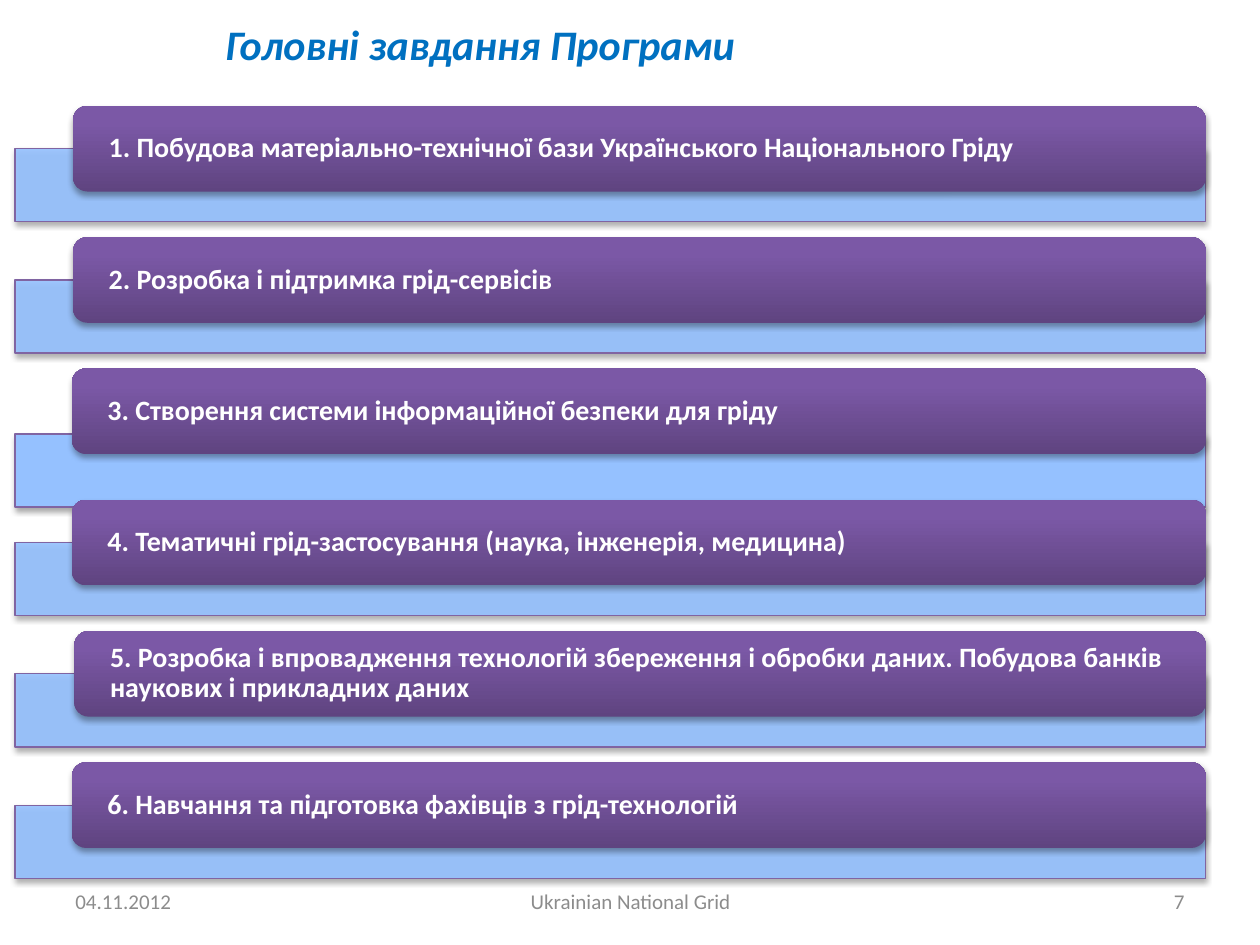
import copy
import pptx
import pptx.util
import pptx.dml.color
import pptx.enum.shapes
import pptx.enum.text
import pptx.oxml
import pptx.oxml.ns

Inches, Pt = pptx.util.Inches, pptx.util.Pt
RGB = pptx.dml.color.RGBColor
SHAPE = pptx.enum.shapes.MSO_SHAPE
ALIGN = pptx.enum.text.PP_ALIGN
MIDDLE = pptx.enum.text.MSO_ANCHOR.MIDDLE
qn = pptx.oxml.ns.qn

BLUE = RGB(0x00, 0x70, 0xC0)
GREY = RGB(0x8C, 0x8C, 0x8C)
WHITE = RGB(0xFF, 0xFF, 0xFF)
SKY = RGB(0x95, 0xC1, 0xFF)
EDGE = RGB(0x80, 0x64, 0xA2)
STOPS = [(0, RGB(0x5F, 0x44, 0x80)), (0.8, RGB(0x7B, 0x58, 0xA6)),
         (1, RGB(0x7C, 0x57, 0xA8))]

TITLE = "Головні завдання Програми"
# Task, left edge of its bar, drop of its strip below the bar top, strip opacity
TASKS = [
    ("1. Побудова матеріально-технічної бази Українського Національного Гріду", 0.58, 0.34, 90),
    ("2. Розробка і підтримка грід-сервісів", 0.58, 0.34, 90),
    ("3. Створення системи інформаційної безпеки для гріду", 0.57, 0.52, 100),
    ("4. Тематичні грід-застосування (наука, інженерія, медицина)", 0.57, 0.34, 90),
    ("5. Розробка і впровадження технологій збереження і обробки даних. "
     "Побудова банків наукових і прикладних даних", 0.59, 0.34, 90),
    ("6. Навчання та підготовка фахівців з грід-технологій", 0.57, 0.34, 90),
]
FOOTER = [
    ("04.11.2012", 0.5, 2.33, ALIGN.LEFT),
    ("Ukrainian National Grid", 3.42, 3.17, ALIGN.CENTER),
    ("7", 7.17, 2.33, ALIGN.RIGHT),
]
TOP, STEP, RIGHT = 0.84, 1.042, 9.57
SHADOW = (
    '<a:outerShdw xmlns:a="http://schemas.openxmlformats.org/drawingml/2006/main" '
    'blurRad="39370" dist="22860" dir="5400000" rotWithShape="0">'
    '<a:srgbClr val="000000"><a:alpha val="35000"/></a:srgbClr></a:outerShdw>')

deck = pptx.Presentation()
deck.slide_width, deck.slide_height = Inches(10), Inches(7.5)
slide = deck.slides.add_slide(deck.slide_layouts[6])


def write(frame, text, size, color, bold=False, align=ALIGN.LEFT):
    frame.text = text
    para = frame.paragraphs[0]
    para.alignment = align
    font = para.runs[0].font
    font.name, font.size, font.bold = "Calibri", Pt(size), bold
    font.color.rgb = color
    return para


def add_block(kind, *box):
    block = slide.shapes.add_shape(kind, *map(Inches, box))
    block.shadow.inherit = False
    effects = block._element.spPr.find(qn("a:effectLst"))
    effects.append(pptx.oxml.parse_xml(SHADOW))
    return block


def add_strip(top, alpha):
    strip = add_block(SHAPE.RECTANGLE, 0.12, top, RIGHT - 0.12, 0.58)
    strip.fill.solid()
    strip.fill.fore_color.rgb = SKY
    strip.line.color.rgb = EDGE
    strip.line.width = Pt(0.75)
    if alpha < 100:
        color = strip._element.spPr.find(qn("a:solidFill"))[0]
        color.makeelement(qn("a:alpha"))
        pptx.oxml.ns  # namespace map used below
        node = color.makeelement(qn("a:alpha"), {"val": str(alpha * 1000)})
        color.append(node)


def add_bar(text, left, top):
    bar = add_block(SHAPE.ROUNDED_RECTANGLE, left, top, RIGHT - left, 0.68)
    bar.line.fill.background()
    bar.fill.gradient()
    bar.fill.gradient_angle = 90
    stops = bar._element.spPr.find(qn("a:gradFill")).find(qn("a:gsLst"))
    stops.insert(1, copy.deepcopy(stops[0]))
    for stop, (place, color) in zip(bar.fill.gradient_stops, STOPS):
        stop.color.rgb = color
        stop.position = place
    frame = bar.text_frame
    frame.word_wrap = True
    frame.vertical_anchor = MIDDLE
    frame.margin_left = frame.margin_right = Inches(0.25)
    frame.margin_top = frame.margin_bottom = 0
    write(frame, text, 16, WHITE, True).line_spacing = 0.9


# Footer
for text, left, width, align in FOOTER:
    box = slide.shapes.add_textbox(Inches(left), Inches(6.95), Inches(width), Inches(0.4))
    box.text_frame.word_wrap = True
    box.text_frame.vertical_anchor = MIDDLE
    write(box.text_frame, text, 12, GREY, align=align)

# Title
title = slide.shapes.add_textbox(Inches(1.69), Inches(0.1), Inches(4.28), Inches(0.5))
write(title.text_frame, TITLE, 24, BLUE, True).runs[0].font.italic = True

# Tasks: each a strip with a bar over it
for row, (text, left, drop, alpha) in enumerate(TASKS):
    top = TOP + row * STEP
    add_strip(top + drop, alpha)
    add_bar(text, left, top)

deck.save("out.pptx")
